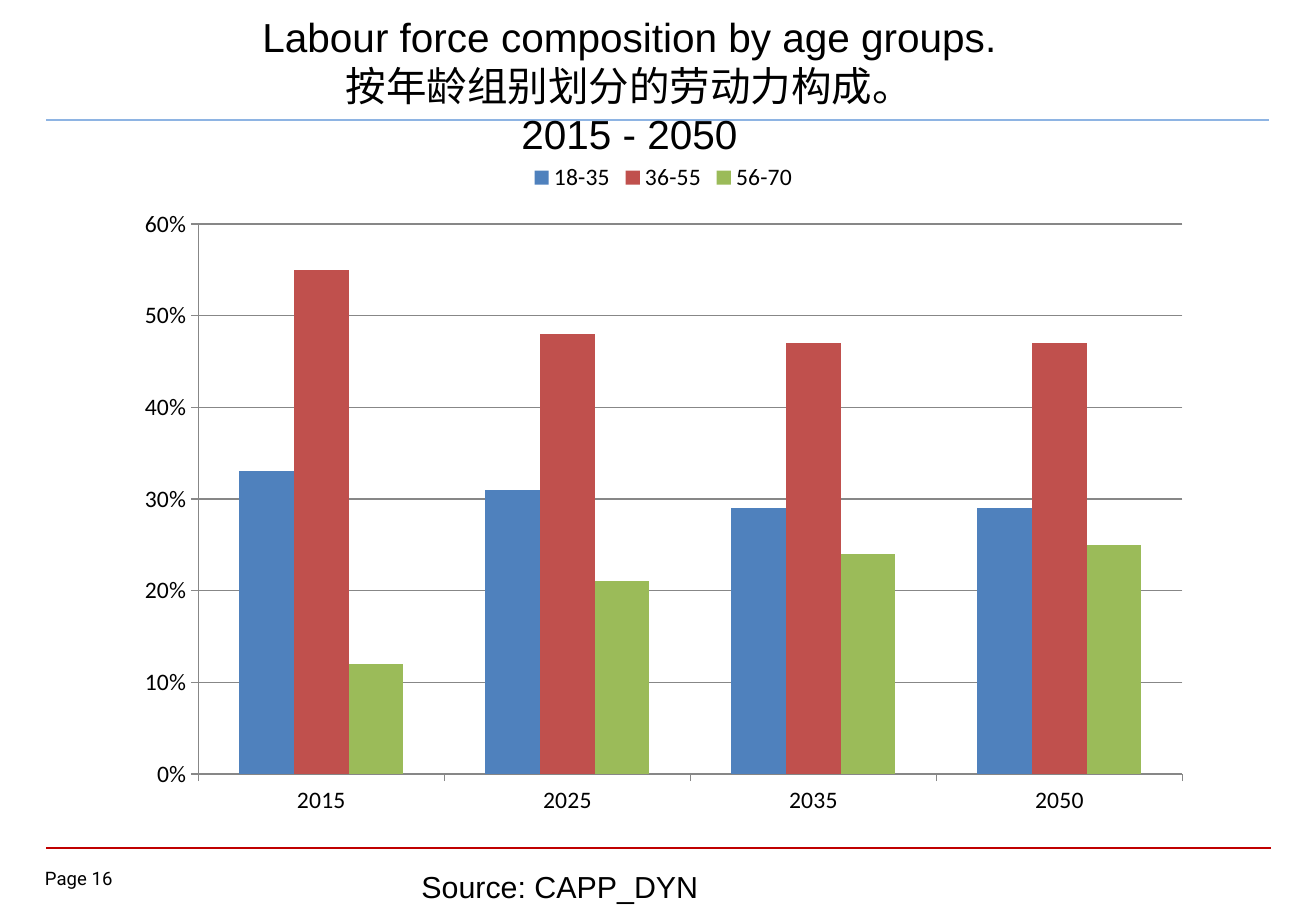
from pptx import Presentation
from pptx.chart.data import CategoryChartData
from pptx.dml.color import RGBColor
from pptx.enum.chart import XL_CHART_TYPE, XL_LEGEND_POSITION, XL_TICK_MARK
from pptx.enum.shapes import MSO_CONNECTOR
from pptx.enum.text import MSO_AUTO_SIZE, PP_ALIGN
from pptx.oxml import parse_xml
from pptx.oxml.ns import nsdecls, qn
from pptx.util import Inches, Pt

STRAIGHT = MSO_CONNECTOR.STRAIGHT
COLUMNS = XL_CHART_TYPE.COLUMN_CLUSTERED
LEGEND_TOP = XL_LEGEND_POSITION.TOP
TICK_OUT = XL_TICK_MARK.OUTSIDE
GROW = MSO_AUTO_SIZE.SHAPE_TO_FIT_TEXT
LEFT, CENTER = PP_ALIGN.LEFT, PP_ALIGN.CENTER

THEME = {
    "text": RGBColor.from_string("000000"),
    "top_rule": RGBColor.from_string("8EB4E3"),
    "bottom_rule": RGBColor.from_string("C00000"),
    "grid": RGBColor.from_string("878787"),
    "series": [RGBColor.from_string(c) for c in ("4F81BD", "C0504D", "9BBB59")],
    "font": "Arial", "chart_font": "Calibri", "page_font": "Roboto",
    "title_size": Pt(24), "source_size": Pt(18),
    "chart_size": Pt(14), "page_size": Pt(11),
}


def add_rule(s, right, y, color, width):
    line = s.shapes.add_connector(
        STRAIGHT, Inches(0.38), Inches(y), Inches(right), Inches(y))
    line.line.color.rgb = color
    line.line.width = Pt(width)
    line._element.spPr.append(parse_xml(f"<a:effectLst {nsdecls('a')}/>"))


def add_text(s, box, text, font, size, align=LEFT):
    tf = s.shapes.add_textbox(*[Inches(v) for v in box]).text_frame
    tf.text = text
    tf.word_wrap = False
    for p in tf.paragraphs:
        p.alignment = align
        for r in p.runs:
            r.font.name = font
            r.font.size = size
            r.font.color.rgb = THEME["text"]
    return tf


prs = Presentation()
prs.slide_width, prs.slide_height = Inches(10.83), Inches(7.5)
s = prs.slides.add_slide(prs.slide_layouts[6])

# Rules above and below the chart
add_rule(s, 10.46, 6.98, THEME["bottom_rule"], 1)
add_rule(s, 10.44, 0.99, THEME["top_rule"], 1.5)

# Page number
tf = add_text(s, (0.37, 7.14, 0.73, 0.22), "Page 16",
              THEME["page_font"], THEME["page_size"])
tf.margin_left = tf.margin_right = tf.margin_top = tf.margin_bottom = 0

# Labour force shares by age group
data = CategoryChartData(number_format="0%")
data.categories = ["2015", "2025", "2035", "2050"]
data.add_series("18-35", (0.33, 0.31, 0.29, 0.29))
data.add_series("36-55", (0.55, 0.48, 0.47, 0.47))
data.add_series("56-70", (0.12, 0.21, 0.24, 0.25))
chart = s.shapes.add_chart(
    COLUMNS, Inches(1.01), Inches(1.23), Inches(8.9), Inches(5.59), data).chart
chart.has_title = False
chart.font.name = THEME["chart_font"]
chart.font.size = THEME["chart_size"]
chart.font.color.rgb = THEME["text"]
chart.has_legend = True
chart.legend.position = LEGEND_TOP
chart.legend.include_in_layout = False

plot = chart.plots[0]
plot.gap_width = 150
plot.overlap = 0
plot.vary_by_categories = False
for series, color in zip(plot.series, THEME["series"]):
    series.format.fill.solid()
    series.format.fill.fore_color.rgb = color
    series.invert_if_negative = False

# Axes and gridlines
value_axis = chart.value_axis
value_axis.minimum_scale, value_axis.maximum_scale = 0, 0.6
value_axis.major_unit = 0.1
value_axis.tick_labels.number_format = "0%"
value_axis.tick_labels.number_format_is_linked = False
value_axis.has_major_gridlines = True
for axis in (chart.category_axis, value_axis):
    axis.major_tick_mark = TICK_OUT
for part in (chart.category_axis, value_axis, value_axis.major_gridlines):
    part.format.line.color.rgb = THEME["grid"]
    part.format.line.width = Pt(0.75)

# Plot area as fractions of the chart frame
plot_area = chart._chartSpace.chart.plotArea
for layout in plot_area.findall(qn("c:layout")):
    plot_area.remove(layout)
plot_area.insert(0, parse_xml(
    f"<c:layout {nsdecls('c')}><c:manualLayout>"
    '<c:layoutTarget val="inner"/><c:xMode val="edge"/><c:yMode val="edge"/>'
    '<c:x val="0.07"/><c:y val="0.11"/><c:w val="0.91"/><c:h val="0.81"/>'
    "</c:manualLayout></c:layout>"))

# Title and source
title = "Labour force composition by age groups.\n按年龄组别划分的劳动力构成。\n2015 - 2050"
tf = add_text(s, (2.03, 0.05, 6.3, 1.31), title,
              THEME["font"], THEME["title_size"], CENTER)
tf.auto_size = GROW
tf = add_text(s, (3.37, 7.1, 2.5, 0.4), "Source: CAPP_DYN",
              THEME["font"], THEME["source_size"])
tf.auto_size = GROW

prs.save("out.pptx")
